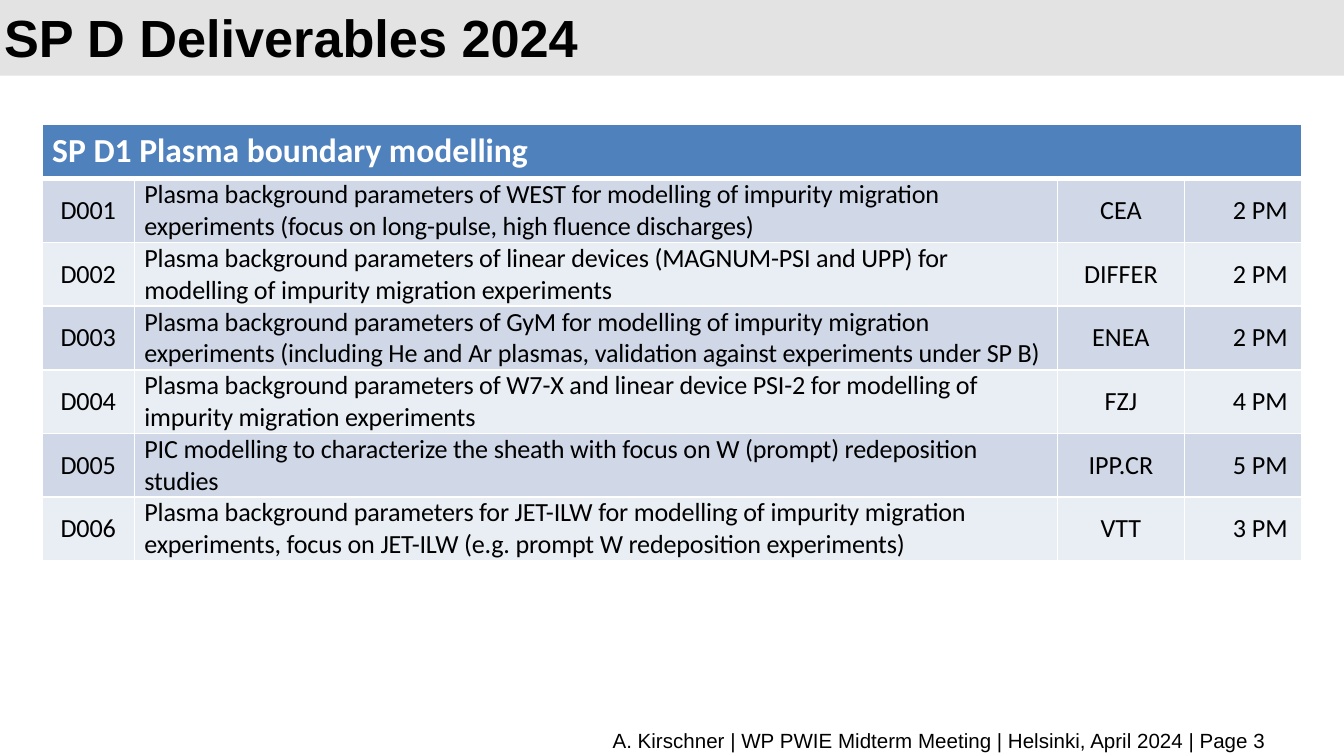
from lxml import etree
from pptx import Presentation
from pptx.dml.color import RGBColor
from pptx.enum.shapes import MSO_SHAPE
from pptx.enum.text import MSO_ANCHOR, PP_ALIGN
from pptx.oxml.ns import qn
from pptx.util import Pt

LEFT, CENTER, RIGHT = PP_ALIGN.LEFT, PP_ALIGN.CENTER, PP_ALIGN.RIGHT
TOP, MIDDLE = MSO_ANCHOR.TOP, MSO_ANCHOR.MIDDLE
RECTANGLE = MSO_SHAPE.RECTANGLE
TITLE_ONLY = 5

COLUMN_WIDTHS = [49.4, 494.6, 67.9, 62.7]
ROW_HEIGHT = 29.3
HEADING = "SP D1 Plasma boundary modelling"
DELIVERABLES = [
    ("D001", "Plasma background parameters of WEST for modelling of impurity migration "
     "experiments (focus on long-pulse, high fluence discharges)", "CEA", "2 PM"),
    ("D002", "Plasma background parameters of linear devices (MAGNUM-PSI and UPP) for "
     "modelling of impurity migration experiments", "DIFFER", "2 PM"),
    ("D003", "Plasma background parameters of GyM for modelling of impurity migration "
     "experiments (including He and Ar plasmas, validation against experiments under SP B)",
     "ENEA", "2 PM"),
    ("D004", "Plasma background parameters of W7-X and linear device PSI-2 for modelling of "
     "impurity migration experiments", "FZJ", "4 PM"),
    ("D005", "PIC modelling to characterize the sheath with focus on W (prompt) redeposition "
     "studies", "IPP.CR", "5 PM"),
    ("D006", "Plasma background parameters for JET-ILW for modelling of impurity migration "
     "experiments, focus on JET-ILW (e.g. prompt W redeposition experiments)", "VTT", "3 PM"),
]


def color(code):
    return RGBColor.from_string(code)


class SlideBuilder:
    heading_font, table_font = "Arial", "Calibri"
    black, white, gray = "000000", "FFFFFF", "E3E3E3"
    blue, bands = "4F81BD", ("D0D8E8", "E9EDF4")

    def __init__(self, page):
        self.page = page

    def add_span(self, para, text, font, size, ink, bold=False, align=LEFT):
        para.alignment = align
        span = para.add_run()
        span.text = text
        span.font.name = font
        span.font.size = Pt(size)
        span.font.bold = bold
        span.font.color.rgb = color(ink)
        return span

    def title(self, text, left, top, width, height):
        box = self.page.shapes.title
        box.left, box.top, box.width, box.height = Pt(left), Pt(top), Pt(width), Pt(height)
        box.text_frame.vertical_anchor = MIDDLE
        para = box.text_frame.paragraphs[0]
        para.line_spacing = Pt(32)
        self.add_span(para, text, self.heading_font, 28, self.black, bold=True)

    def band(self, left, top, width, height):
        box = self.page.shapes.add_shape(RECTANGLE, Pt(left), Pt(top), Pt(width), Pt(height))
        box.shadow.inherit = False
        box.fill.solid()
        box.fill.fore_color.rgb = color(self.gray)
        box.line.fill.background()
        # The band lies behind the title
        self.page.shapes.title.element.addprevious(box.element)

    def footer(self, text, left, top, width, height):
        box = self.page.shapes.add_textbox(Pt(left), Pt(top), Pt(width), Pt(height))
        box.text_frame.word_wrap = True
        self.add_span(box.text_frame.paragraphs[0], text, self.heading_font, 11,
                      self.black, align=RIGHT)

    def style_cell(self, cell, fill, anchor, bottom=1):
        # Borders come before the fill in the cell properties
        properties = cell._tc.get_or_add_tcPr()
        for side, width in (("L", 1), ("R", 1), ("T", 1), ("B", bottom)):
            line = etree.SubElement(properties, qn(f"a:ln{side}"), w=str(Pt(width)))
            solid = etree.SubElement(line, qn("a:solidFill"))
            etree.SubElement(solid, qn("a:srgbClr"), val=self.white)
        cell.fill.solid()
        cell.fill.fore_color.rgb = color(fill)
        cell.vertical_anchor = anchor

    def tighten(self, cell):
        cell.margin_left = cell.margin_right = Pt(5.4)
        cell.margin_top = cell.margin_bottom = 0

    def table(self, heading, rows, left, top):
        count = len(rows) + 1
        grid = self.page.shapes.add_table(
            count, len(COLUMN_WIDTHS), Pt(left), Pt(top),
            Pt(sum(COLUMN_WIDTHS)), Pt(ROW_HEIGHT * count)).table
        for column, width in zip(grid.columns, COLUMN_WIDTHS):
            column.width = Pt(width)
        for row in grid.rows:
            row.height = Pt(ROW_HEIGHT)

        # Heading across all columns
        for cell in grid.rows[0].cells:
            self.style_cell(cell, self.blue, TOP, bottom=3)
        first = grid.cell(0, 0)
        first.merge(grid.cell(0, len(COLUMN_WIDTHS) - 1))
        self.tighten(first)
        para = first.text_frame.paragraphs[0]
        para.line_spacing = 1.15
        self.add_span(para, heading, self.table_font, 18, self.white, bold=True)

        # Deliverables in alternating bands
        for number, values in enumerate(rows):
            for index, (text, align) in enumerate(zip(values, (CENTER, LEFT, CENTER, RIGHT))):
                cell = grid.cell(number + 1, index)
                self.style_cell(cell, self.bands[number % 2], MIDDLE)
                span = self.add_span(cell.text_frame.paragraphs[0], text, self.table_font, 14,
                                     self.black, align=align)
                if index < 2:
                    self.tighten(cell)
                    span.font._element.set("spc", "-10")


def main():
    deck = Presentation()
    deck.slide_width, deck.slide_height = Pt(720), Pt(405)
    slide = SlideBuilder(deck.slides.add_slide(deck.slide_layouts[TITLE_ONLY]))

    # Title on its band
    slide.band(0, 0, 720, 40.5)
    slide.title("SP D Deliverables 2024", -5, 6.5, 594, 27.4)

    # Deliverables and footer
    slide.table(HEADING, DELIVERABLES, 22.6, 66.5)
    slide.footer("A. Kirschner | WP PWIE Midterm Meeting | Helsinki, April 2024 | Page 3",
                 36.7, 386.6, 648.7, 16)
    deck.save("out.pptx")


if __name__ == "__main__":
    main()
